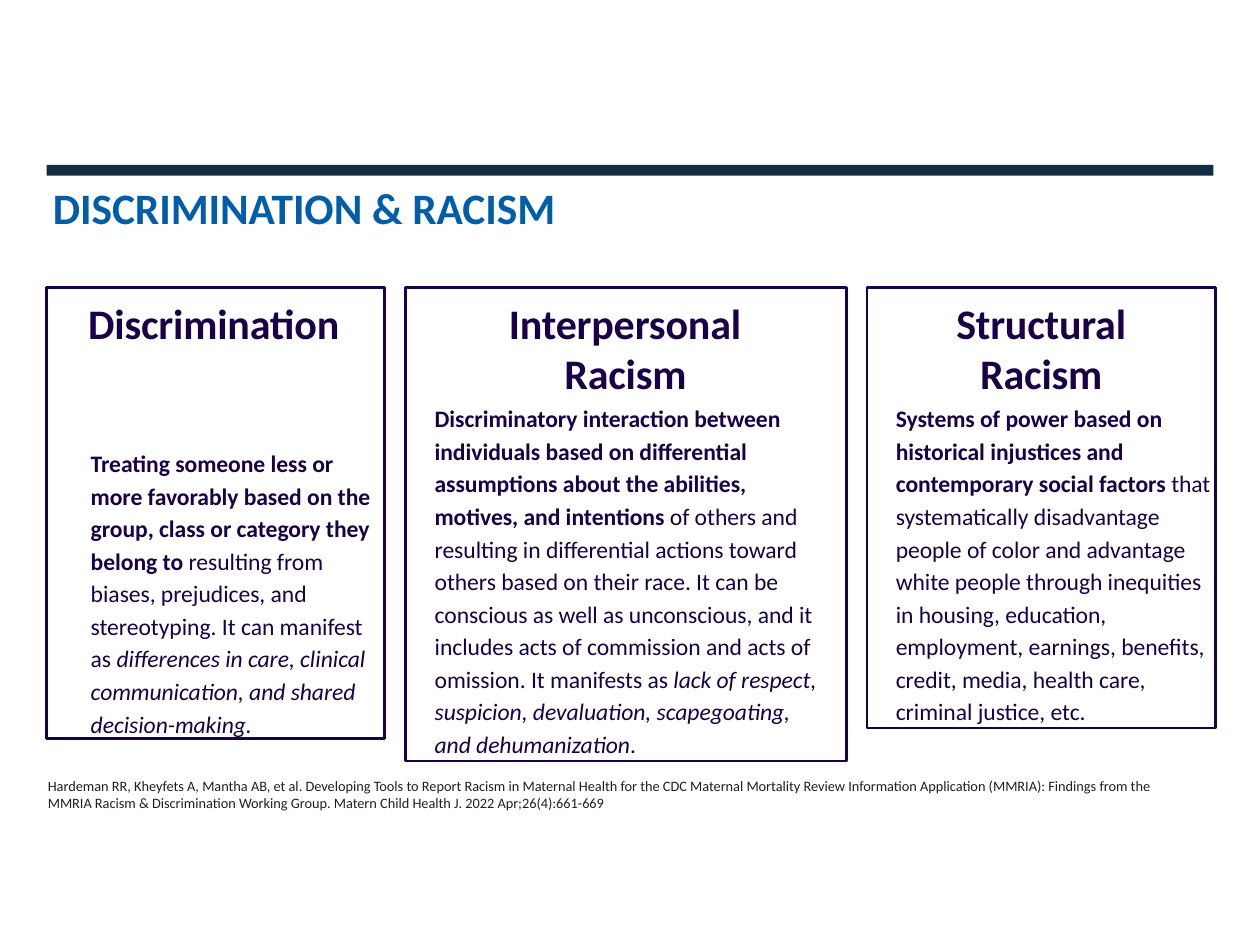
"""Build the slide that defines discrimination and two forms of racism."""
import dataclasses
import typing

import pptx
import pptx.dml.color
import pptx.enum.shapes
import pptx.enum.text
import pptx.util

NAVY = pptx.dml.color.RGBColor(0x12, 0x2C, 0x41)
PURPLE = pptx.dml.color.RGBColor(0x1A, 0x00, 0x46)
BLUE = pptx.dml.color.RGBColor(0x00, 0x5D, 0xAA)
CHARCOAL = pptx.dml.color.RGBColor(0x20, 0x20, 0x20)
FONT = "Calibri"
WIDTH, HEIGHT = pptx.util.Inches(10), pptx.util.Inches(7.5)
COLUMNS, ROWS = 100, 75
CARD_TOP = 22.8


class Area(typing.NamedTuple):
    """A place on the grid of columns and rows."""

    column: float
    row: float
    columns: float
    rows: float

    def lengths(self) -> tuple[int, int, int, int]:
        """Turn grid units into slide lengths."""
        return (
            int(WIDTH * self.column / COLUMNS),
            int(HEIGHT * self.row / ROWS),
            int(WIDTH * self.columns / COLUMNS),
            int(HEIGHT * self.rows / ROWS),
        )


class Span(typing.NamedTuple):
    """A stretch of text with one style."""

    text: str
    bold: bool = False
    italic: bool = False


@dataclasses.dataclass(frozen=True)
class Layout:
    """Paragraph indents in grid columns and spacing in points."""

    left: float = 0.1
    first: float = 0
    right: float = 0
    before: float = 0
    line: float = 1.0


@dataclasses.dataclass(frozen=True)
class Style:
    """Type size, colour and letter spacing in hundredths of a point."""

    size: float
    color: pptx.dml.color.RGBColor
    tracking: int = 0


@dataclasses.dataclass(frozen=True)
class Card:
    """A framed definition with a heading and a body."""

    column: float
    columns: float
    rows: float
    heading: str
    heading_layout: Layout
    body: tuple[Span, ...]
    body_layout: Layout


HEADING = Style(24, PURPLE, -10)
BODY = Style(13.5, PURPLE)
CARDS = (
    Card(
        3.7, 26.8, 35.8, "Discrimination", Layout(left=3.3),
        (
            Span("Treating someone less or more favorably based on the group, "
                 "class or category they belong to ", bold=True),
            Span("resulting from biases, prejudices, and stereotyping. "
                 "It can manifest as "),
            Span("differences in care, clinical communication, and shared "
                 "decision-making.", italic=True),
        ),
        Layout(left=3.5, right=0.8, before=55.5, line=1.15),
    ),
    Card(
        32.2, 35, 37.6, "Interpersonal Racism", Layout(left=12.6, first=-4.4),
        (
            Span("Discriminatory interaction between individuals based on "
                 "differential assumptions about the abilities, motives, and "
                 "intentions ", bold=True),
            Span("of others and resulting in differential actions toward others "
                 "based on their race. It can be conscious as well as "
                 "unconscious, and it includes acts of commission and acts of "
                 "omission. It manifests as "),
            Span("lack of respect, suspicion, devaluation, scapegoating, and "
                 "dehumanization", italic=True),
            Span("."),
        ),
        Layout(left=2.3, right=2.1, before=1.1, line=1.15),
    ),
    Card(
        68.8, 27.7, 35, "Structural Racism", Layout(left=9, first=-1.9),
        (
            Span("Systems of power based on historical injustices and "
                 "contemporary social factors ", bold=True),
            Span("that systematically disadvantage people of color and "
                 "advantage white people through inequities in housing, "
                 "education, employment, earnings, benefits, credit, media, "
                 "health care, criminal justice, etc."),
        ),
        Layout(left=2.3, right=0.3, before=1.1, line=1.15),
    ),
)
CITATION = (
    "Hardeman RR, Kheyfets A, Mantha AB, et al. Developing Tools to Report "
    "Racism in Maternal Health for the CDC Maternal Mortality Review "
    "Information Application (MMRIA): Findings from the MMRIA Racism & "
    "Discrimination Working Group. Matern Child Health J. 2022 "
    "Apr;26(4):661-669"
)


def prepare_frame(box: typing.Any, top: float) -> typing.Any:
    """Set wrapping, anchor and insets, and return the text frame."""
    frame = box.text_frame
    frame.word_wrap = True
    frame.vertical_anchor = pptx.enum.text.MSO_ANCHOR.TOP
    frame.margin_left = frame.margin_right = frame.margin_bottom = 0
    frame.margin_top = pptx.util.Inches(top)
    return frame


def write(para: typing.Any, spans: typing.Iterable[Span], style: Style,
          layout: Layout) -> None:
    """Fill a paragraph run by run."""
    para.alignment = pptx.enum.text.PP_ALIGN.LEFT
    para.line_spacing = layout.line
    para.space_before = pptx.util.Pt(layout.before)
    properties = para._p.get_or_add_pPr()
    for name, columns in (("marL", layout.left), ("indent", layout.first),
                          ("marR", layout.right)):
        properties.set(name, str(int(WIDTH * columns / COLUMNS)))
    for span in spans:
        run = para.add_run()
        run.text = span.text
        run.font.name = FONT
        run.font.size = pptx.util.Pt(style.size)
        run.font.color.rgb = style.color
        run.font.bold = span.bold
        run.font.italic = span.italic
        run._r.get_or_add_rPr().set("spc", str(style.tracking))


def add_rectangle(page: typing.Any, area: Area) -> typing.Any:
    """Add a rectangle without shadow."""
    box = page.shapes.add_shape(
        pptx.enum.shapes.MSO_SHAPE.RECTANGLE, *area.lengths())
    box.shadow.inherit = False
    return box


def add_card(page: typing.Any, card: Card) -> None:
    """Draw one framed definition."""
    box = add_rectangle(
        page, Area(card.column, CARD_TOP, card.columns, card.rows))
    box.fill.background()
    box.line.color.rgb = PURPLE
    box.line.width = pptx.util.Pt(1.5)
    frame = prepare_frame(box, 0.08)
    write(frame.paragraphs[0], [Span(card.heading, bold=True)], HEADING,
          card.heading_layout)
    write(frame.add_paragraph(), card.body, BODY, card.body_layout)


def add_label(page: typing.Any, area: Area, span: Span, style: Style) -> None:
    """Place a single paragraph of free text."""
    frame = prepare_frame(page.shapes.add_textbox(*area.lengths()), 0.01)
    write(frame.paragraphs[0], [span], style, Layout())


def main() -> None:
    """Build and save the deck."""
    deck = pptx.Presentation()
    deck.slide_width, deck.slide_height = WIDTH, HEIGHT
    page = deck.slides.add_slide(deck.slide_layouts[6])
    bar = add_rectangle(page, Area(3.7, 13.1, 92.6, 0.85))
    bar.fill.solid()
    bar.fill.fore_color.rgb = NAVY
    bar.line.fill.background()
    for card in CARDS:
        add_card(page, card)
    add_label(page, Area(4.1, 14.3, 50.3, 4.3),
              Span("DISCRIMINATION & RACISM", bold=True),
              Style(24.8, BLUE, -5))
    add_label(page, Area(3.7, 61.6, 89, 2.9), Span(CITATION),
              Style(8.2, CHARCOAL))
    deck.save("out.pptx")


if __name__ == "__main__":
    main()
